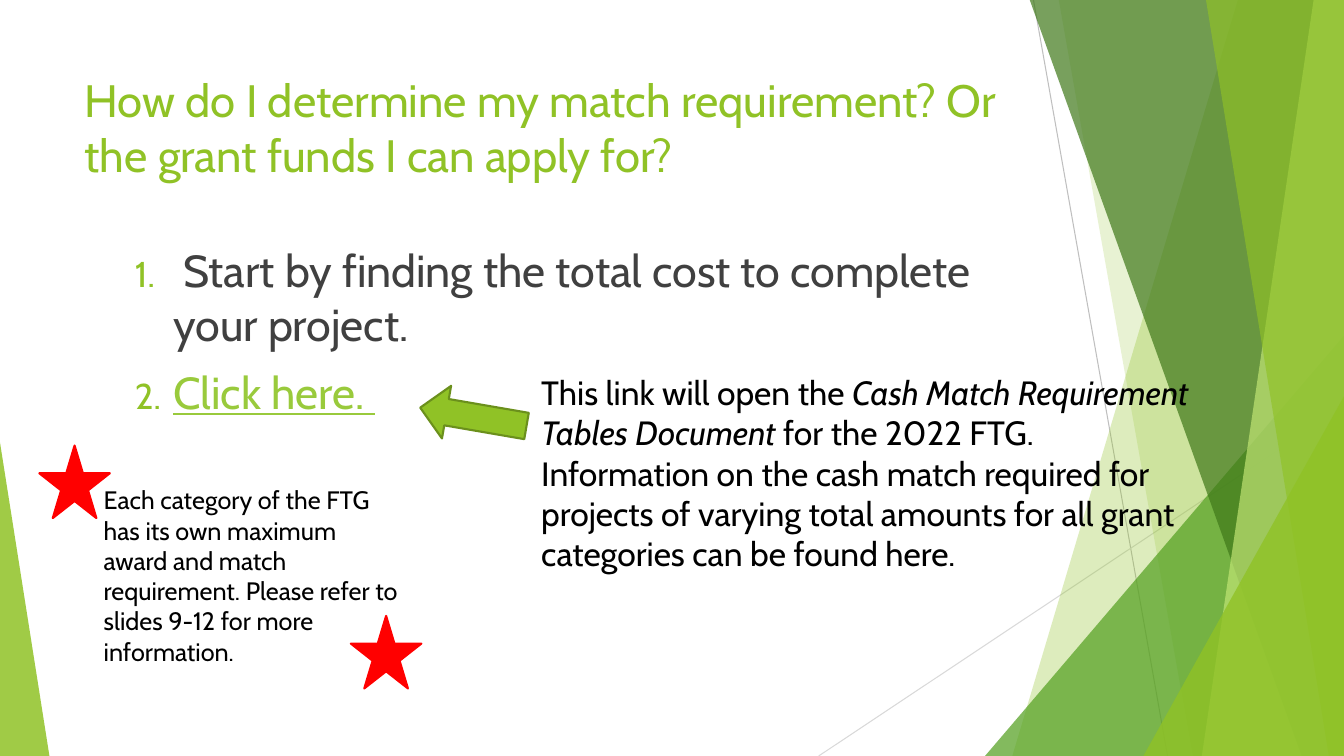
from lxml import etree
from pptx import Presentation
from pptx.dml.color import RGBColor
from pptx.enum import shapes, text
from pptx.oxml.ns import qn
from pptx.util import Inches, Pt

LIME = RGBColor(0x90, 0xC2, 0x26)
GREEN = RGBColor(0x54, 0xA0, 0x21)
DARK = RGBColor(0x3F, 0x78, 0x19)
PALE = RGBColor(0xC0, 0xE4, 0x74)
OLIVE = RGBColor(0x6B, 0x90, 0x1C)
LINK = RGBColor(0x99, 0xCA, 0x3C)
RED = RGBColor(0xFF, 0, 0)
BLACK = RGBColor(0, 0, 0)
GRAY = RGBColor(0x40, 0x40, 0x40)
SILVER = RGBColor(0xBF, 0xBF, 0xBF)
MIST = RGBColor(0xD9, 0xD9, 0xD9)
KIND = shapes.MSO_SHAPE
W, H = 13.33, 7.5

deck = Presentation()
deck.slide_width, deck.slide_height = Inches(W), Inches(H)
slide = deck.slides.add_slide(deck.slide_layouts[5])
parts = slide.shapes


def paint(shape, color, alpha=100, edge=None):
    """Fill a shape, with alpha in percent and an optional outline color."""
    shape.shadow.inherit = False
    shape.fill.solid()
    shape.fill.fore_color.rgb = color
    if alpha < 100:
        tint = shape._element.spPr.find(qn("a:solidFill"))[0]
        etree.SubElement(tint, qn("a:alpha"), val=str(alpha * 1000))
    if edge is None:
        shape.line.fill.background()
    else:
        shape.line.color.rgb = edge
        shape.line.width = Pt(1.5)


def write(frame, runs, size, color):
    """Add runs of (text, italic) to the first paragraph of a frame."""
    frame.word_wrap = True
    frame.vertical_anchor = text.MSO_ANCHOR.TOP
    para = frame.paragraphs[0]
    para.alignment = text.PP_ALIGN.LEFT
    para.font.name, para.font.size = "Cabin", Pt(size)
    para.font.color.rgb = color
    for words, slant in runs:
        run = para.add_run()
        run.text = words
        if slant:
            run.font.italic = True


# Background facets
for x1, y1, x2, y2, color in [(10.25, 0, 11.58, H, SILVER),
                              (W, 4.03, 8.12, H, MIST)]:
    line = parts.add_connector(shapes.MSO_CONNECTOR.STRAIGHT, Inches(x1),
                               Inches(y1), Inches(x2), Inches(y2))
    line.line.color.rgb = color
    line.line.width = Pt(0.75)
    etree.SubElement(line._element.spPr, qn("a:effectLst"))

# Bands run from a top x to a bottom x and fill to the right edge;
# triangles have a box and the place of their apex.
facets = [
    ("band", (12.28, 10.04), LIME, 30),
    ("band", (10.5, 11.83), LIME, 20),
    ("tri", (9.77, 3.33, 3.56, 4.17, 1), GREEN, 72),
    ("band", (10.21, 12.91), DARK, 70),
    ("band", (13.03, 11.92), PALE, 70),
    ("band", (11.96, 13.18), LIME, 65),
    ("tri", (11.34, 3.93, 1.99, 3.57, 1), LIME, 80),
    ("tri", (0, 4.39, 0.49, 3.11, 0), LIME, 85),
]
for kind, geo, color, alpha in facets:
    if kind == "band":
        top, low = geo
        pen = parts.build_freeform(Inches(top), Inches(-0.01))
        pen.add_line_segments([(Inches(x), Inches(y)) for x, y in
                               [(W, -0.01), (W, H), (low, H)]], close=True)
        facet = pen.convert_to_shape()
    else:
        facet = parts.add_shape(KIND.ISOSCELES_TRIANGLE,
                                *map(Inches, geo[:4]))
        facet.adjustments[0] = geo[4]
    paint(facet, color, alpha)

# Title
title = parts.title
title.left, title.top = Inches(0.74), Inches(0.67)
title.width, title.height = Inches(9.4), Inches(1.44)
title.text_frame.auto_size = text.MSO_AUTO_SIZE.NONE
write(title.text_frame, [("How do I determine my match requirement? "
                          "Or the grant funds I can apply for?", False)],
      32.4, LIME)

# Numbered steps
steps = parts.add_textbox(*map(Inches, (0.74, 2.36, 9.4, 1.86))).text_frame
steps.word_wrap = True
para = steps.paragraphs[0]
for words, color, under in [
        (" Start by finding the total cost to complete your project.",
         GRAY, False),
        ("Click here. ", LINK, True)]:
    if under:
        para = steps.add_paragraph()
    run = para.add_run()
    run.text = words
    para.font.name, para.font.size = "Cabin", Pt(32)
    para.font.color.rgb = color
    para.font.underline = under
    para.space_before = Pt(10)
    props = para._p.get_or_add_pPr()
    props.set("marL", str(Inches(0.88)))
    props.set("indent", str(Inches(-0.38)))
    bullet = [etree.Element(qn("a:buClr")),
              etree.Element(qn("a:buSzPct"), val="80000"),
              etree.Element(qn("a:buFont"), typeface="Cabin"),
              etree.Element(qn("a:buAutoNum"), type="arabicPeriod")]
    etree.SubElement(bullet[0], qn("a:srgbClr"), val=str(LIME))
    spot = list(props).index(props.find(qn("a:defRPr")))
    props[spot:spot] = bullet

# Arrow, stars and notes
arrow = parts.add_shape(KIND.UP_ARROW, *map(Inches, (4.43, 3.6, 0.53, 1.07)))
arrow.rotation = 279.8
paint(arrow, LIME, edge=OLIVE)

notes = [
    ((5.27, 3.64, 6.64, 2.52), 24, [
        ("This link will open the ", False),
        ("Cash Match Requirement Tables Document ", True),
        ("for the 2022 FTG. Information on the cash match required for "
         "projects of varying total amounts for all grant categories "
         "can be found here.", False)]),
    ((0.93, 4.76, 3.19, 1.92), 18, [
        ("Each category of the FTG has its own maximum award and match "
         "requirement. Please refer to slides 9-12 for more information.",
         False)]),
]
stars = [(0.39, 4.42), (3.48, 6.11)]
for (box, size, runs), (x, y) in zip(notes, stars):
    write(parts.add_textbox(*map(Inches, box)).text_frame, runs, size, BLACK)
    star = parts.add_shape(KIND.STAR_5_POINT,
                           *map(Inches, (x, y, 0.7, 0.72)))
    paint(star, RED, edge=RED)

deck.save("out.pptx")
